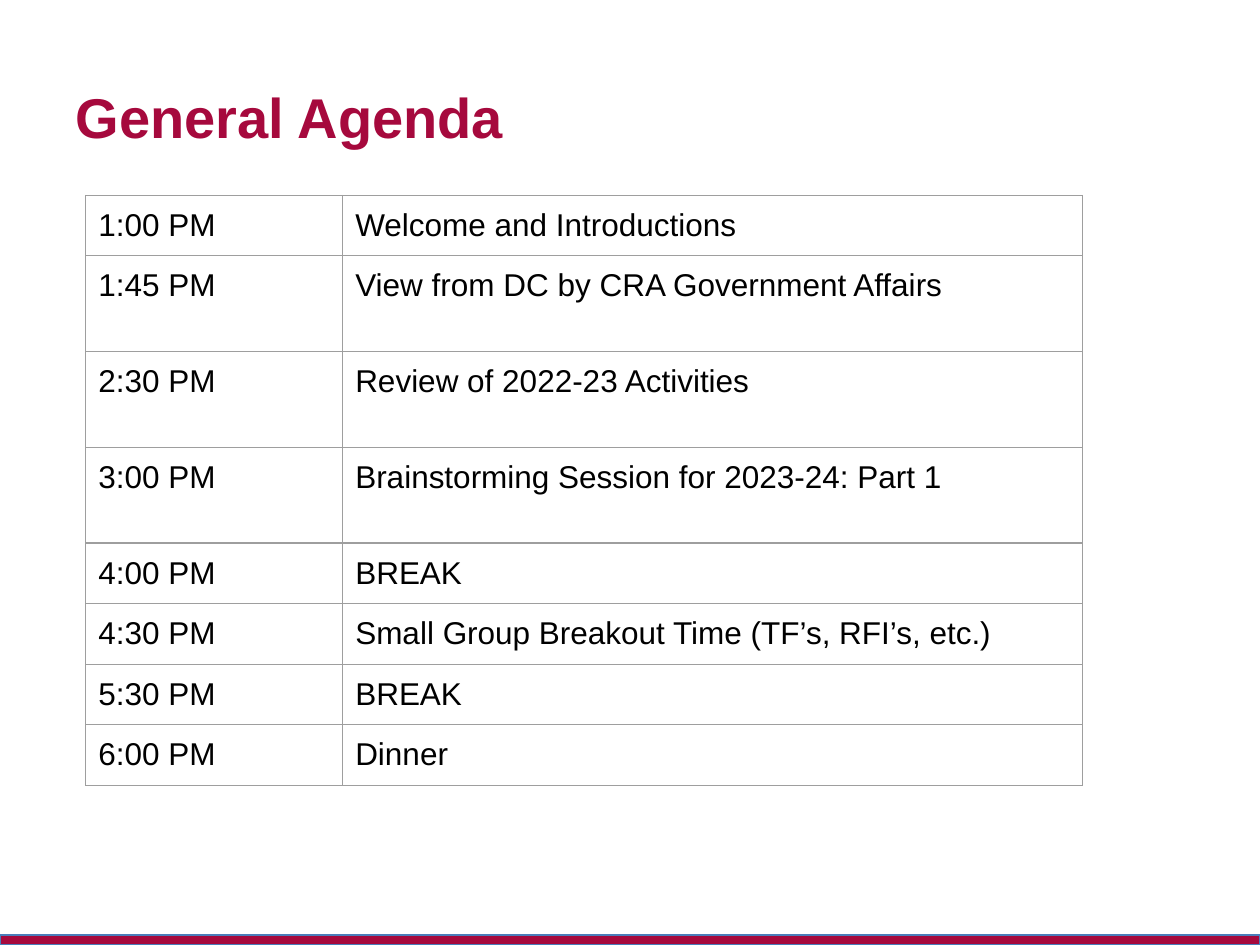
from lxml.etree import SubElement
from pptx import Presentation
from pptx.dml.color import RGBColor
from pptx.enum.shapes import MSO_SHAPE
from pptx.enum.text import MSO_ANCHOR, PP_ALIGN
from pptx.oxml.ns import qn
from pptx.util import Inches, Pt

COLORS = {
    "crimson": "A6093D",
    "bar_edge": "4A7DBA",
    "text": "000000",
    "grid": "9E9E9E",
}
SINGLE, TALL = 0.48, 0.76
AGENDA = [
    ("1:00 PM", "Welcome and Introductions", SINGLE),
    ("1:45 PM", "View from DC by CRA Government Affairs", TALL),
    ("2:30 PM", "Review of 2022-23 Activities", TALL),
    ("3:00 PM", "Brainstorming Session for 2023-24: Part 1", TALL),
    ("4:00 PM", "BREAK", SINGLE),
    ("4:30 PM", "Small Group Breakout Time (TF’s, RFI’s, etc.)", SINGLE),
    ("5:30 PM", "BREAK", SINGLE),
    ("6:00 PM", "Dinner", SINGLE),
]
COLUMN_WIDTHS = (2.04, 5.87)


def rgb(name):
    return RGBColor.from_string(COLORS[name])


class AgendaSlide:
    font = "Arial"
    line_width = Pt(0.75)
    cell_inset = Inches(0.1)

    def __init__(self, slide):
        self.slide = slide

    def add_text(self, frame, text, size, color, bold=False):
        paragraph = frame.paragraphs[0]
        paragraph.alignment = PP_ALIGN.LEFT
        run = paragraph.add_run()
        run.text = text
        run.font.name = self.font
        run.font.size = Pt(size)
        run.font.bold = bold
        run.font.color.rgb = rgb(color)

    def bar(self, left, top, width, height):
        bar = self.slide.shapes.add_shape(
            MSO_SHAPE.RECTANGLE, Inches(left), Inches(top), Inches(width), Inches(height))
        bar.shadow.inherit = False
        bar.fill.solid()
        bar.fill.fore_color.rgb = rgb("crimson")
        bar.line.color.rgb = rgb("bar_edge")
        bar.line.width = self.line_width

    def title(self, text, left, top, width, height):
        title = self.slide.shapes.title
        title.left, title.top = Inches(left), Inches(top)
        title.width, title.height = Inches(width), Inches(height)
        title.text_frame.vertical_anchor = MSO_ANCHOR.MIDDLE
        self.add_text(title.text_frame, text, 32, "crimson", bold=True)

    def border(self, cell):
        properties = cell._tc.get_or_add_tcPr()
        for position, side in enumerate(("a:lnL", "a:lnR", "a:lnT", "a:lnB")):
            line = properties.makeelement(qn(side), {"w": str(int(self.line_width))})
            properties.insert(position, line)
            fill = SubElement(line, qn("a:solidFill"))
            SubElement(fill, qn("a:srgbClr"), val=COLORS["grid"])

    def cell(self, cell, text):
        cell.margin_left = cell.margin_right = self.cell_inset
        cell.margin_top = cell.margin_bottom = self.cell_inset
        cell.vertical_anchor = MSO_ANCHOR.TOP
        cell.fill.background()
        self.border(cell)
        self.add_text(cell.text_frame, text, 18, "text")

    def schedule(self, entries, widths, left, top):
        height = sum(entry[-1] for entry in entries)
        table = self.slide.shapes.add_table(
            len(entries), len(widths), Inches(left), Inches(top),
            Inches(sum(widths)), Inches(height)).table
        table.first_row = table.horz_banding = False
        for column, width in zip(table.columns, widths):
            column.width = Inches(width)
        for row, (time, session, row_height) in zip(table.rows, entries):
            row.height = Inches(row_height)
            for cell, text in zip(row.cells, (time, session)):
                self.cell(cell, text)


def main():
    deck = Presentation()
    deck.slide_width, deck.slide_height = Inches(10), Inches(7.5)
    title_only = deck.slide_layouts[5]
    agenda = AgendaSlide(deck.slides.add_slide(title_only))

    # Footer bar
    agenda.bar(0, 7.42, 10, 0.08)

    # Heading
    agenda.title("General Agenda", 0.5, 0.3, 9, 1.25)

    # Timetable
    agenda.schedule(AGENDA, COLUMN_WIDTHS, 0.68, 1.55)

    deck.save("out.pptx")


if __name__ == "__main__":
    main()
